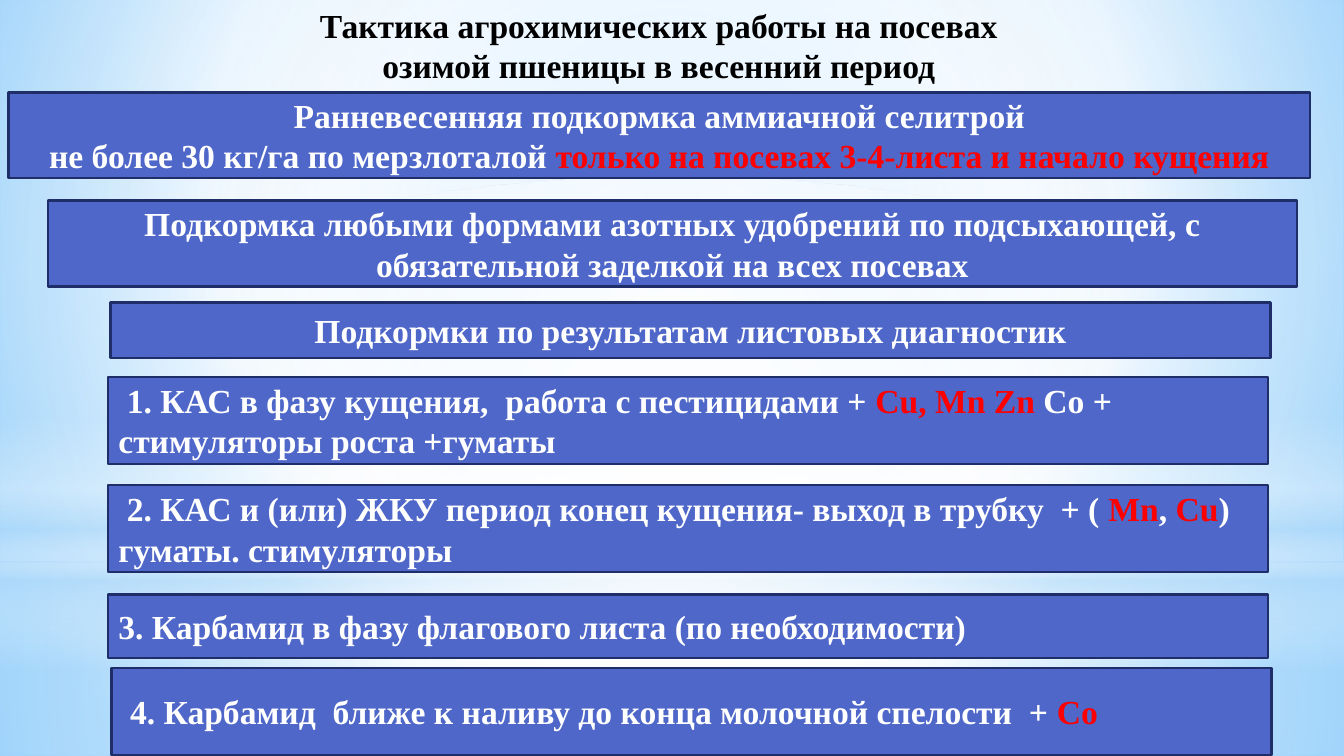
"""Build the slide on spring agrochemical work on winter wheat."""
from lxml.etree import SubElement
from pptx import Presentation
from pptx.dml.color import RGBColor
from pptx.enum.shapes import MSO_SHAPE as Preset
from pptx.enum.text import MSO_ANCHOR as Anchor, MSO_AUTO_SIZE as AutoSize, PP_ALIGN as Align
from pptx.oxml.ns import qn
from pptx.util import Pt

COLORS = {"band": "4E67C8", "edge": "1F2E69", "text": "FFFFFF", "accent": "FF0000",
          "title": "000000", "white": "FFFFFF", "haze": "B4DCFA", "sky": "9ED5FF",
          "deep": "5BB9FF"}
FONT = {"name": "Times New Roman", "size": Pt(18), "bold": True}
MARGINS = {"margin_left": Pt(5.4), "margin_right": Pt(5.4),
           "margin_top": Pt(2.7), "margin_bottom": Pt(2.7)}
CENTRE = (50, 50, 50, 50)


def set_gradient(owner, stops, focus):
    grad = owner.find(".//" + qn("a:gradFill"))
    for child in list(grad):
        grad.remove(child)
    stop_list = SubElement(grad, qn("a:gsLst"))
    for position, color, opacity in stops:
        stop = SubElement(stop_list, qn("a:gs"), pos=str(position * 1000))
        shade = SubElement(stop, qn("a:srgbClr"), val=COLORS[color])
        if opacity < 100:
            SubElement(shade, qn("a:alpha"), val=str(opacity * 1000))
    if focus:
        route = SubElement(grad, qn("a:path"), path="circle")
        sides = {side: str(share * 1000) for side, share in zip("ltrb", focus)}
        SubElement(route, qn("a:fillToRect"), **sides)
    else:
        SubElement(grad, qn("a:lin"), ang="5400000", scaled="0")


def write_lines(frame, lines, align, indent=0):
    for name, value in MARGINS.items():
        setattr(frame, name, value)
    for number, line in enumerate(lines):
        paragraph = frame.add_paragraph() if number else frame.paragraphs[0]
        paragraph.alignment = align
        if indent:
            paragraph._p.get_or_add_pPr().set("indent", str(Pt(indent)))
        for words, color in line:
            run = paragraph.add_run()
            run.text = words
            for name, value in FONT.items():
                setattr(run.font, name, value)
            run.font.color.rgb = RGBColor.from_string(COLORS[color])


prs = Presentation()
prs.slide_width, prs.slide_height = Pt(720), Pt(405)
slide = prs.slides.add_slide(prs.slide_layouts[5])

slide.background.fill.gradient()
set_gradient(slide._element, [(0, "sky", 100), (60, "white", 100), (100, "deep", 100)],
             (20, 10, 20, 60))

glows = [
    (Preset.RECTANGLE, 301.5, 103.5,
     [(0, "white", 91), (37, "white", 76), (100, "haze", 79)], CENTRE),
    (Preset.RECTANGLE, 0, 301.5,
     [(0, "white", 89), (48, "white", 62), (100, "haze", 79)], CENTRE),
    (Preset.RECTANGLE, 222.5, 135,
     [(0, "white", 0), (29, "white", 30), (45, "haze", 40), (55, "white", 26),
      (65, "haze", 60), (100, "white", 0)], None),
    (Preset.OVAL, 94.5, 301.5, [(0, "white", 100), (56, "white", 0)], CENTRE),
]
for preset, top, height, stops, focus in glows:
    glow = slide.shapes.add_shape(preset, 0, Pt(top), Pt(720), Pt(height))
    glow.shadow.inherit = False
    glow.line.fill.background()
    glow.fill.gradient()
    set_gradient(glow._element, stops, focus)

title = slide.shapes.title
slide.shapes._spTree.append(title._element)
title.left, title.top, title.width, title.height = Pt(164), Pt(0), Pt(378), Pt(49)
title.text_frame.word_wrap = False
title.text_frame.auto_size = AutoSize.NONE
title.text_frame.vertical_anchor = Anchor.TOP
write_lines(title.text_frame, [[("Тактика агрохимических работы на посевах", "title")],
                               [("озимой пшеницы в весенний период", "title")]], Align.CENTER)

steps = [
    (4.5, 49.5, 697.5, 46, Align.CENTER, 0,
     [[("Ранневесенняя подкормка аммиачной селитрой", "text")],
      [("не более 30 кг/га по мерзлоталой ", "text"),
       ("только на посевах 3-4-листа и начало кущения", "accent")]]),
    (25.75, 107.5, 669, 46, Align.CENTER, 0,
     [[("Подкормка любыми формами азотных удобрений по подсыхающей, "
        "с обязательной заделкой на всех посевах", "text")]]),
    (59.25, 162, 621.5, 29.75, Align.CENTER, 0,
     [[("Подкормки по результатам листовых диагностик", "text")]]),
    (58, 202, 621.5, 46.5, Align.LEFT, 4.5,
     [[("1. КАС в фазу кущения,  работа с пестицидами + ", "text"), ("Cu, Mn Zn", "accent"),
       (" Со + стимуляторы роста +гуматы", "text")]]),
    (58, 260, 621.5, 46.5, Align.LEFT, 4.5,
     [[("2. КАС и (или) ЖКУ период конец кущения- выход в трубку  + ( ", "text"),
       ("Mn", "accent"), (", ", "text"), ("Cu", "accent"),
       (") гуматы. стимуляторы", "text")]]),
    (58, 318.5, 621.5, 34, Align.LEFT, 0,
     [[("3. Карбамид в фазу флагового листа (по необходимости)", "text")]]),
    (59.75, 358, 621.5, 46.5, Align.LEFT, 4.5,
     [[("4. Карбамид  ближе к наливу до конца молочной спелости  + ", "text"),
       ("Со", "accent")]]),
]
for left, top, width, height, align, indent, lines in steps:
    step = slide.shapes.add_shape(Preset.RECTANGLE, Pt(left), Pt(top), Pt(width), Pt(height))
    step.shadow.inherit = False
    step.fill.solid()
    step.fill.fore_color.rgb = RGBColor.from_string(COLORS["band"])
    step.line.color.rgb = RGBColor.from_string(COLORS["edge"])
    step.line.width = Pt(1.25)
    step.text_frame.word_wrap = True
    step.text_frame.vertical_anchor = Anchor.MIDDLE
    write_lines(step.text_frame, lines, align, indent)

prs.save("out.pptx")
